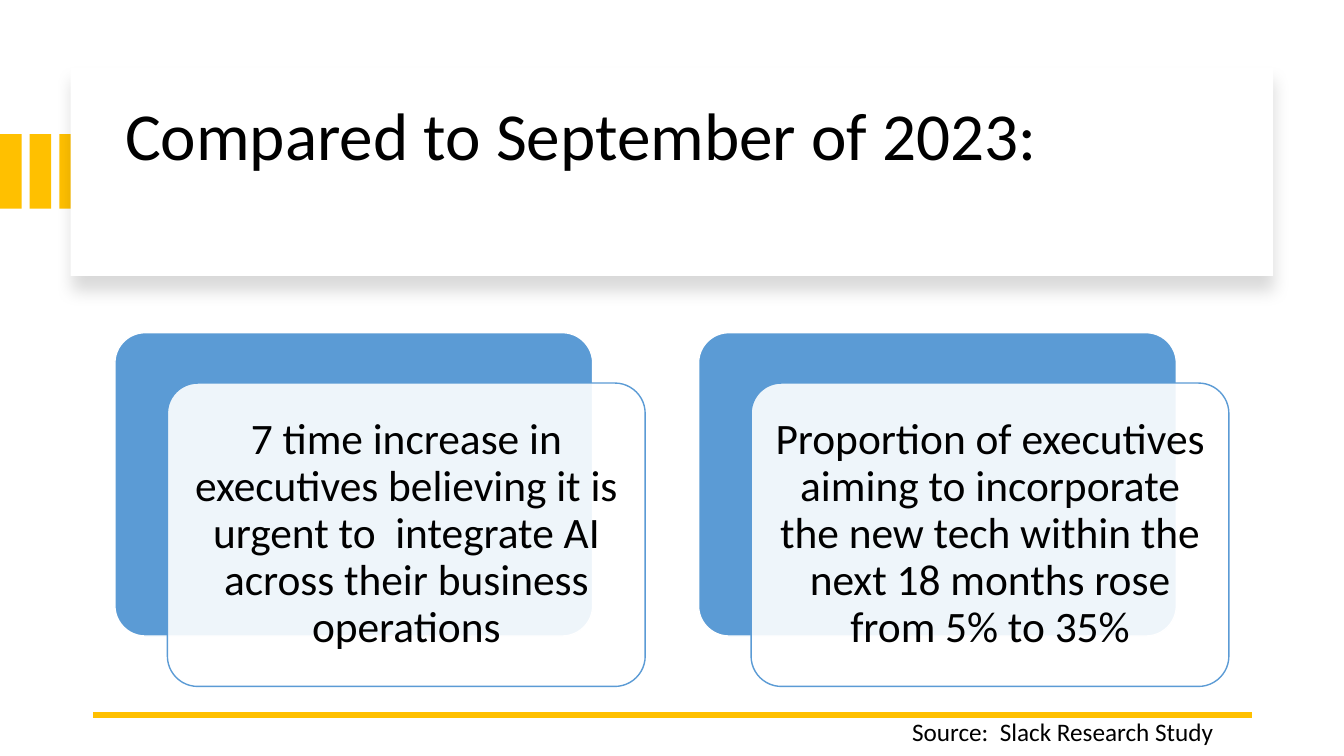
from dataclasses import dataclass

from lxml import etree
from pptx import Presentation
from pptx.dml.color import RGBColor
from pptx.enum.shapes import MSO_CONNECTOR, MSO_SHAPE
from pptx.enum.text import MSO_ANCHOR, PP_ALIGN
from pptx.oxml.ns import qn
from pptx.util import Pt

RECT, ROUNDED = MSO_SHAPE.RECTANGLE, MSO_SHAPE.ROUNDED_RECTANGLE
STRAIGHT = MSO_CONNECTOR.STRAIGHT
TOP, MIDDLE = MSO_ANCHOR.TOP, MSO_ANCHOR.MIDDLE
LEFT, CENTER = PP_ALIGN.LEFT, PP_ALIGN.CENTER

FONT = "Calibri"
COLORS = {"gold": "FFC000", "blue": "5B9BD5", "white": "FFFFFF", "black": "000000"}


@dataclass
class Box:
    left: float
    top: float
    width: float
    height: float

    def shifted(self, dx: float, dy: float = 0) -> "Box":
        return Box(self.left + dx, self.top + dy, self.width, self.height)

    def lengths(self) -> list[Pt]:
        return [Pt(v) for v in (self.left, self.top, self.width, self.height)]


STRIPE = Box(0, 95.8, 15.4, 53.3)
STRIPE_PITCH = 21.2
STRIPE_COUNT = 3
TITLE_PANEL = Box(50.4, 48.2, 859, 149)
TITLE = Box(82.1, 64.1, 801.4, 122.4)
CARD = Box(82.1, 237.6, 341.3, 216.7)
CARD_PITCH = 416.9
CARD_OFFSET = (37.5, 36)
FINDINGS = [
    "7 time increase in executives believing it is urgent to  integrate AI across their business operations",
    "Proportion of executives aiming to incorporate the new tech within the next 18 months rose from 5% to 35%",
]


def rgb(name: str) -> RGBColor:
    return RGBColor.from_string(COLORS[name])


def write(shape, text: str, *, size: float, align=LEFT, anchor=TOP, spacing: float = 1,
          margins: tuple = (7.2, 3.6, 7.2, 3.6), wrap: bool = True) -> None:
    frame = shape.text_frame
    frame.word_wrap = wrap
    frame.vertical_anchor = anchor
    (frame.margin_left, frame.margin_top,
     frame.margin_right, frame.margin_bottom) = [Pt(m) for m in margins]
    paragraph = frame.paragraphs[0]
    paragraph.alignment = align
    paragraph.line_spacing = spacing
    run = paragraph.add_run()
    run.text = text
    run.font.name = FONT
    run.font.size = Pt(size)
    run.font.color.rgb = rgb("black")


def add_block(slide, box: Box, fill: str, kind=RECT, line: str = ""):
    block = slide.shapes.add_shape(kind, *box.lengths())
    block.shadow.inherit = False
    block.fill.solid()
    block.fill.fore_color.rgb = rgb(fill)
    if line:
        block.line.color.rgb = rgb(line)
        block.line.width = Pt(1)
    else:
        block.line.fill.background()
    if kind == ROUNDED:
        block.adjustments[0] = 0.1
    return block


def set_alpha(color, percent: int) -> None:
    etree.SubElement(color, qn("a:alpha"), val=str(percent * 1000))


def add_title(slide) -> None:
    panel = add_block(slide, TITLE_PANEL, "white")
    effects = panel._element.spPr.find(qn("a:effectLst"))
    shadow = etree.SubElement(effects, qn("a:outerShdw"), blurRad=str(Pt(11)),
                              dist=str(Pt(10)), dir="5400000", algn="t", rotWithShape="0")
    set_alpha(etree.SubElement(shadow, qn("a:srgbClr"), val=COLORS["black"]), 15)

    title = slide.shapes.title
    title.left, title.top, title.width, title.height = TITLE.lengths()
    write(title, "Compared to September of 2023:", size=48, anchor=MIDDLE,
          spacing=0.9, margins=(7.2, 3.6, 7.2, 56.3))
    panel._element.addnext(title._element)


def add_rule(slide) -> None:
    rule = slide.shapes.add_connector(STRAIGHT, Pt(894.2), Pt(510.5), Pt(66.2), Pt(510.5))
    rule.line.color.rgb = rgb("gold")
    rule.line.width = Pt(4.5)
    etree.SubElement(rule._element.spPr, qn("a:effectLst"))


def add_finding(slide, box: Box, text: str) -> None:
    add_block(slide, box, "blue", ROUNDED, "white")
    front = add_block(slide, box.shifted(*CARD_OFFSET), "white", ROUNDED, "blue")
    set_alpha(front._element.spPr.find(qn("a:solidFill"))[0], 90)
    write(front, text, size=31, align=CENTER, anchor=MIDDLE, spacing=0.9, margins=(9.4,) * 4)


def main() -> None:
    deck = Presentation()
    deck.slide_width, deck.slide_height = Pt(960), Pt(540)
    slide = deck.slides.add_slide(deck.slide_layouts.get_by_name("Title Only"))

    for index in range(STRIPE_COUNT):
        add_block(slide, STRIPE.shifted(index * STRIPE_PITCH), "gold")
    add_title(slide)
    add_rule(slide)
    for index, finding in enumerate(FINDINGS):
        add_finding(slide, CARD.shifted(index * CARD_PITCH), finding)
    source = slide.shapes.add_textbox(*Box(644.4, 508.3, 231.8, 28.8).lengths())
    write(source, "Source:  Slack Research Study", size=18, wrap=False)

    deck.save("out.pptx")


if __name__ == "__main__":
    main()
